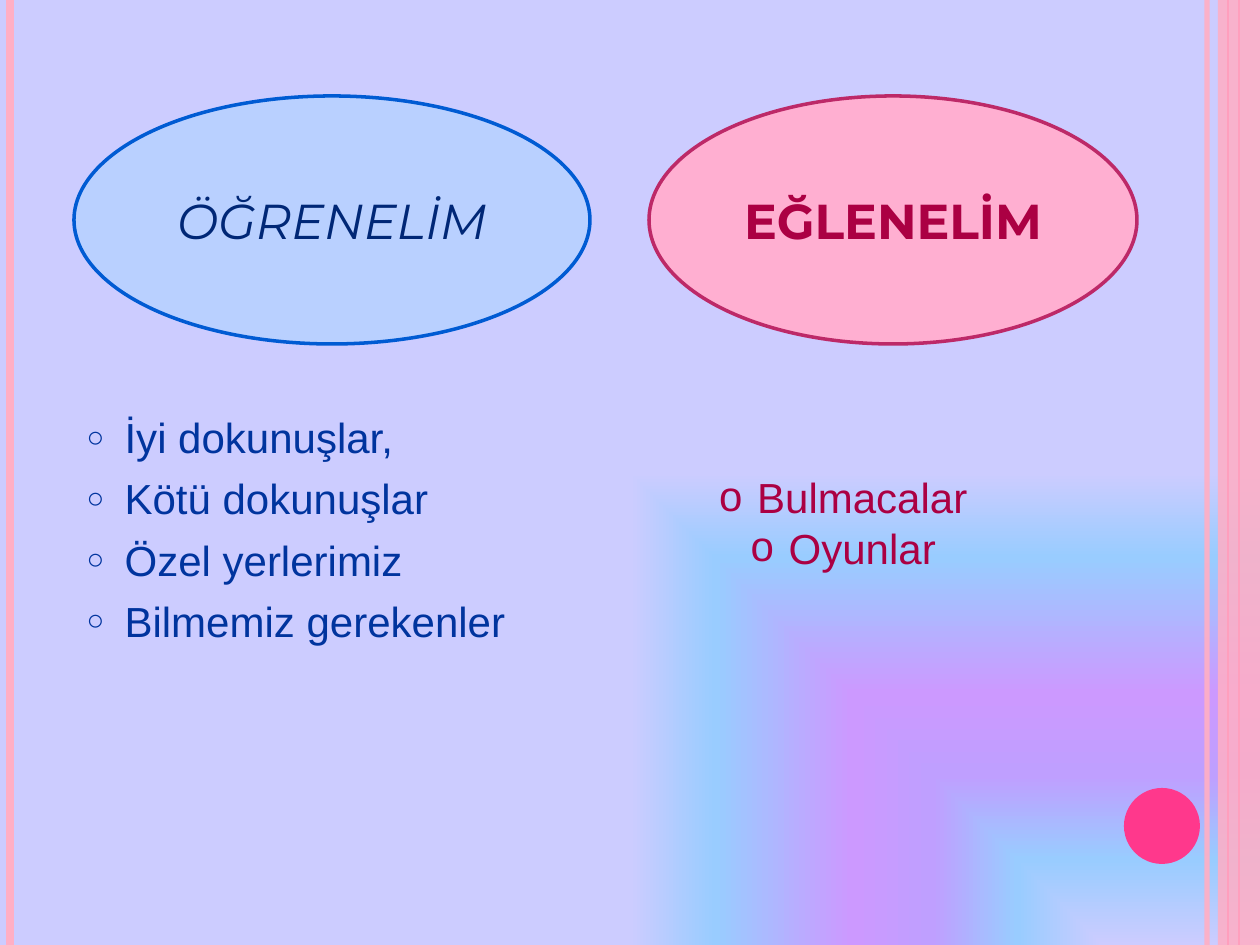
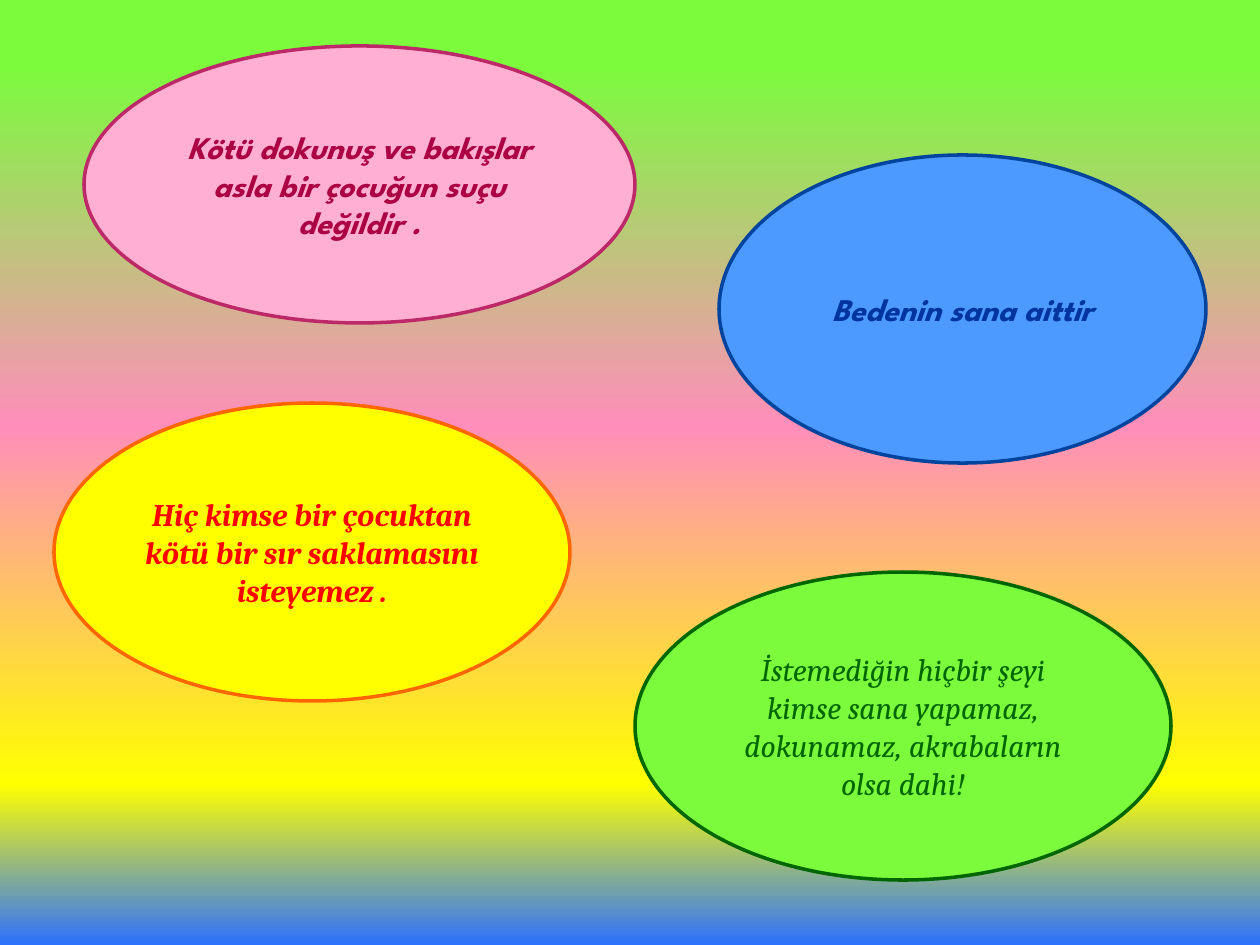
"""Build two slides on safe touch for children."""
from dataclasses import dataclass

from pptx import Presentation
from pptx.dml.color import RGBColor
from pptx.enum.shapes import MSO_CONNECTOR as Link, MSO_SHAPE as Form
from pptx.enum.text import MSO_ANCHOR as Anchor, MSO_AUTO_SIZE as Fit, PP_ALIGN as Align
from pptx.oxml import parse_xml
from pptx.oxml.ns import nsdecls
from pptx.slide import Slide
from pptx.text.text import TextFrame
from pptx.util import Pt

WIDE, HIGH = 1260, 945
SCALE = 914400 / 126
ROSE, HOT = "FFAFC5", "FF388C"
PINK, PLUM, WINE = "FFAFD1", "BD2968", "AB0043"
NAVY, LIME, FOREST = "00349E", "7CFB3D", "006600"
HEAD, FUN, BODY, SERIF = "Montserrat", "League Spartan", "Arial", "Cambria"


@dataclass
class Oval:
    """An outlined ellipse with centred text."""
    box: tuple[int, int, int, int]
    fill: str
    edge: str
    text: str
    ink: str
    font: str
    size: int = 18
    bold: bool = True
    slant: bool = True


@dataclass
class Stripe:
    """A full-height vertical line."""
    left: int
    ink: str
    width: float
    alpha: int = 100


@dataclass
class Stop:
    """One colour stop of a gradient."""
    at: int
    ink: str
    alpha: int = 100


OVALS = [
    Oval((74, 96, 516, 248), "B9D0FF", "005BD3", "ÖĞRENELİM", "002776", HEAD, 28, bold=False),
    Oval((649, 96, 488, 248), PINK, PLUM, "EĞLENELİM", WINE, HEAD, 28, slant=False),
]
RULES = [
    Oval((84, 46, 551, 277), PINK, PLUM,
         "Kötü dokunuş ve bakışlar asla bir çocuğun suçu değildir .", WINE, FUN),
    Oval((719, 155, 487, 308), "4C99FF", "00449E", "Bedenin sana aittir", NAVY, FUN),
    Oval((54, 403, 516, 298), "FFFF00", "FF6600",
         "Hiç kimse bir çocuktan kötü bir sır saklamasını isteyemez .", "FF0000", SERIF),
    Oval((635, 572, 536, 308), LIME, FOREST,
         "İstemediğin hiçbir şeyi kimse sana yapamaz, dokunamaz, akrabaların olsa dahi!",
         FOREST, SERIF, bold=False),
]
STRIPES = [Stripe(1207, ROSE, 3, 93), Stripe(10, ROSE, 4.5), Stripe(1239, HOT, 0.75),
           Stripe(1228, HOT, 0.75)]
LILAC = [Stop(0, "CCCCFF"), Stop(18, "99CCFF"), Stop(36, "BF9FFF", 78), Stop(53, "CC99FF"),
         Stop(82, "99CCFF"), Stop(100, "CCCCFF")]
BRIGHT = [Stop(7, LIME), Stop(45, "FF8EBA"), Stop(83, "FFFF00"), Stop(100, "2C71FF")]
CORNER = '<a:path path="rect"><a:fillToRect l="100000" t="100000"/></a:path>'
DOWN = '<a:lin ang="5400000" scaled="0"/>'


def px(size: float) -> int:
    """Turn px into EMU."""
    return round(size * SCALE)


def color(code: str) -> RGBColor:
    """Turn a hex string into a colour."""
    return RGBColor.from_string(code)


def node(text: str):
    """Parse one drawing element."""
    return parse_xml(text.replace("/>", f' {nsdecls("a")}/>', 1))


def fade(item, alpha: int) -> None:
    """Make the colours of a shape partly clear."""
    if alpha < 100:
        for tag in item.element.spPr.xpath(".//a:srgbClr"):
            tag.append(node(f'<a:alpha val="{alpha * 1000}"/>'))


def paint(slide: Slide, stops: list[Stop], way: str) -> None:
    """Give a slide a gradient background."""
    marks = "".join(
        f'<a:gs pos="{s.at * 1000}"><a:srgbClr val="{s.ink}">'
        f'<a:alpha val="{s.alpha * 1000}"/></a:srgbClr></a:gs>' for s in stops)
    slide.element.cSld.insert(0, parse_xml(
        f'<p:bg {nsdecls("p", "a")}><p:bgPr><a:gradFill rotWithShape="1">'
        f'<a:gsLst>{marks}</a:gsLst>{way}</a:gradFill><a:effectLst/></p:bgPr></p:bg>'))


def write(frame: TextFrame, *lines: str, ink: str, font: str, size: int, bold: bool = False,
          slant: bool = False, align: Align = Align.CENTER, lead: float | None = None,
          after: float = 0, mark: str = "", part: int = 100) -> None:
    """Fill a frame with formatted paragraphs."""
    frame.word_wrap = True
    for spot, line in enumerate(lines):
        para = frame.add_paragraph() if spot else frame.paragraphs[0]
        para.alignment, para.space_before, para.space_after = align, Pt(0), Pt(after)
        if lead:
            para.line_spacing = Pt(lead)
        if mark:
            props = para._p.get_or_add_pPr()
            props.set("marL", str(px(38)))
            props.set("indent", str(px(-38)))
            tint = node('<a:srgbClr/>')
            tint.set("val", ink)
            hue = parse_xml(f'<a:buClr {nsdecls("a")}></a:buClr>')
            hue.append(tint)
            props.append(hue)
            props.append(node(f'<a:buSzPct val="{part * 1000}"/>'))
            props.append(node(f'<a:buFont typeface="{font}"/>'))
            props.append(node(f'<a:buChar char="{mark}"/>'))
        run = para.add_run()
        run.text = line
        face = run.font
        face.name, face.size, face.bold, face.italic = font, Pt(size), bold, slant
        face.color.rgb = color(ink)


def shape(slide: Slide, form: Form, box: tuple[int, int, int, int], fill: str,
          edge: str = "", alpha: int = 100):
    """Draw a flat preset shape."""
    item = slide.shapes.add_shape(form, *map(px, box))
    item.shadow.inherit = False
    item.fill.solid()
    item.fill.fore_color.rgb = color(fill)
    fade(item, alpha)
    if edge:
        item.line.color.rgb = color(edge)
        item.line.width = Pt(2)
    else:
        item.line.fill.background()
    return item


def oval(slide: Slide, data: Oval) -> None:
    """Draw an ellipse with its text."""
    item = shape(slide, Form.OVAL, data.box, data.fill, data.edge)
    item.text_frame.vertical_anchor = Anchor.MIDDLE
    write(item.text_frame, data.text, ink=data.ink, font=data.font, size=data.size,
          bold=data.bold, slant=data.slant)


def stripe(slide: Slide, data: Stripe) -> None:
    """Draw a vertical line."""
    item = slide.shapes.add_connector(Link.STRAIGHT, px(data.left), 0, px(data.left), px(HIGH))
    item.line.color.rgb = color(data.ink)
    item.line.width = Pt(data.width)
    fade(item, data.alpha)
    item.element.spPr.append(node('<a:effectLst/>'))


def trim(slide: Slide) -> None:
    """Draw the side bands and the dot."""
    for data in STRIPES:
        stripe(slide, data)
    shape(slide, Form.RECTANGLE, (1218, 0, 42, HIGH), ROSE, alpha=87)
    shape(slide, Form.OVAL, (1124, 788, 76, 76), HOT)


def topics(deck) -> None:
    """Build the slide with the two topic lists."""
    slide = deck.slides.add_slide(deck.slide_layouts[1])
    paint(slide, LILAC, CORNER)
    title = slide.shapes.title.element
    title.getparent().remove(title)
    trim(slide)
    body = slide.placeholders[1]
    body.left, body.top, body.width, body.height = map(px, (74, 405, 536, 487))
    body.text_frame.auto_size = Fit.NONE
    write(body.text_frame, "İyi dokunuşlar,", "Kötü dokunuşlar", "Özel yerlerimiz",
          "Bilmemiz gerekenler", ink=NAVY, font=BODY, size=24, align=Align.LEFT,
          lead=29, after=6, mark="○", part=70)
    for data in OVALS:
        oval(slide, data)
    games = slide.shapes.add_textbox(*map(px, (649, 403, 407, 238))).text_frame
    games.vertical_anchor = Anchor.MIDDLE
    games.margin_right = px(31)
    write(games, "Bulmacalar", "Oyunlar", ink=WINE, font=BODY, size=24, lead=29, mark="o")


def rules(deck) -> None:
    """Build the slide with the four rules."""
    slide = deck.slides.add_slide(deck.slide_layouts[6])
    paint(slide, BRIGHT, DOWN)
    for data in RULES:
        oval(slide, data)


def main() -> None:
    """Build and save the deck."""
    deck = Presentation()
    deck.slide_width, deck.slide_height = px(WIDE), px(HIGH)
    topics(deck)
    rules(deck)
    deck.save("out.pptx")


if __name__ == "__main__":
    main()
